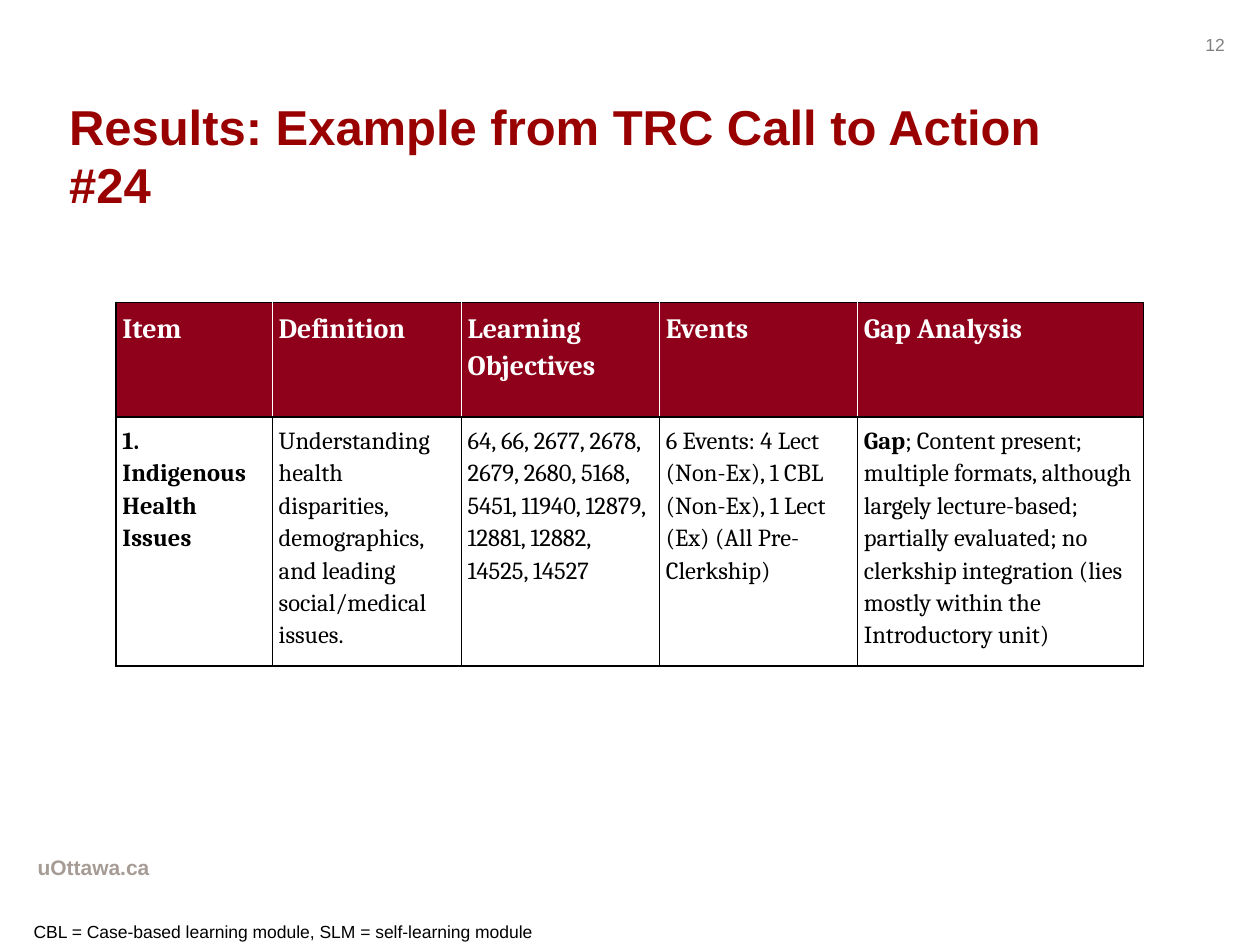
from dataclasses import dataclass

from lxml.etree import SubElement
from pptx import Presentation
from pptx.dml.color import RGBColor
from pptx.enum.text import MSO_ANCHOR, MSO_AUTO_SIZE
from pptx.oxml.ns import qn
from pptx.util import Pt

COLORS = {
    "title": "990000",
    "header": "8F001A",
    "white": "FFFFFF",
    "black": "000000",
    "page": "808080",
    "site": "A69C95",
}


@dataclass
class Label:
    text: str
    left: float
    top: float
    width: float
    height: float
    size: float
    color: str
    bold: bool = False
    wrap: bool = True
    grow: bool = False
    anchor: MSO_ANCHOR = MSO_ANCHOR.TOP


@dataclass
class Column:
    width: float
    heading: str
    lead: str
    detail: str


LABELS = [
    Label("12", 681.8, 15.8, 33.8, 19.4, 10, "page", grow=True),
    Label("uOttawa.ca", 14.4, 484.6, 357, 28, 12, "site", bold=True),
    Label("Results: Example from TRC Call to Action #24", 32.4, 54.7, 612, 67.7,
          28, "title", bold=True, anchor=MSO_ANCHOR.MIDDLE),
    Label("CBL = Case-based learning module, SLM = self-learning module",
          12.2, 522.7, 302.4, 19.4, 10, "black", wrap=False, grow=True),
]

COLUMNS = [
    Column(89.3, "Item", "1. Indigenous Health Issues", ""),
    Column(108, "Definition", "",
           "Understanding health disparities, demographics, and leading "
           "social/medical issues."),
    Column(113.2, "Learning Objectives", "",
           "64, 66, 2677, 2678, 2679, 2680, 5168, 5451, 11940, 12879, "
           "12881, 12882, 14525, 14527"),
    Column(113.2, "Events", "",
           "6 Events: 4 Lect (Non-Ex), 1 CBL (Non-Ex), 1 Lect (Ex) "
           "(All Pre-Clerkship)"),
    Column(163.4, "Gap Analysis", "Gap",
           "; Content present; multiple formats, although largely lecture-based; "
           "partially evaluated; no clerkship integration (lies mostly within "
           "the Introductory unit)"),
]
ROW_HEIGHTS = [65.5, 106.6]


def rgb(name: str) -> RGBColor:
    return RGBColor.from_string(COLORS[name])


def style_font(font, face: str, size: float, color: str) -> None:
    font.name = face
    font.size = Pt(size)
    font.color.rgb = rgb(color)


def draw_label(slide, label: Label) -> None:
    box = slide.shapes.add_textbox(
        Pt(label.left), Pt(label.top), Pt(label.width), Pt(label.height))
    frame = box.text_frame
    frame.word_wrap = label.wrap
    frame.vertical_anchor = label.anchor
    if label.grow:
        frame.auto_size = MSO_AUTO_SIZE.SHAPE_TO_FIT_TEXT
    paragraph = frame.paragraphs[0]
    paragraph.text = label.text
    style_font(paragraph.font, "Arial", label.size, label.color)
    paragraph.font.bold = label.bold


def draw_border(cell, edge: str, color: str) -> None:
    line = SubElement(cell._tc.get_or_add_tcPr(), qn(f"a:ln{edge}"), w=str(Pt(1)))
    fill = SubElement(line, qn("a:solidFill"))
    SubElement(fill, qn("a:srgbClr"), val=COLORS[color])


def fill_cell(cell, lead: str, detail: str, size: float, color: str,
              background: str, borders: dict[str, str]) -> None:
    cell.margin_left = cell.margin_right = Pt(3.6)
    cell.margin_top = cell.margin_bottom = Pt(3.6)
    for edge, edge_color in borders.items():
        draw_border(cell, edge, edge_color)
    cell.fill.solid()
    cell.fill.fore_color.rgb = rgb(background)
    paragraph = cell.text_frame.paragraphs[0]
    paragraph.line_spacing = 1.15
    paragraph.space_after = Pt(12)
    style_font(paragraph.font, "Cambria", size, color)
    for text, bold in ((lead, True), (detail, False)):
        if text:
            run = paragraph.add_run()
            run.text = text
            run.font.bold = bold


def draw_results(slide, columns: list[Column]) -> None:
    total_width = sum(column.width for column in columns)
    results = slide.shapes.add_table(
        len(ROW_HEIGHTS), len(columns), Pt(66.4), Pt(172.8),
        Pt(total_width), Pt(sum(ROW_HEIGHTS))).table
    results.first_row = True
    results.horz_banding = False
    for row, height in zip(results.rows, ROW_HEIGHTS):
        row.height = Pt(height)
    body_borders = dict.fromkeys("LRTB", "black")
    last = len(columns) - 1
    for index, column in enumerate(columns):
        results.columns[index].width = Pt(column.width)
        header_borders = {
            "L": "black" if index == 0 else "white",
            "R": "black" if index == last else "white",
            "T": "black",
            "B": "black",
        }
        fill_cell(results.cell(0, index), column.heading, "", 16,
                  "white", "header", header_borders)
        fill_cell(results.cell(1, index), column.lead, column.detail, 14,
                  "black", "white", body_borders)


def main() -> None:
    deck = Presentation()
    deck.slide_width, deck.slide_height = Pt(720), Pt(540)
    slide = deck.slides.add_slide(deck.slide_layouts[6])
    for label in LABELS:
        draw_label(slide, label)
    draw_results(slide, COLUMNS)
    deck.save("out.pptx")


if __name__ == "__main__":
    main()
